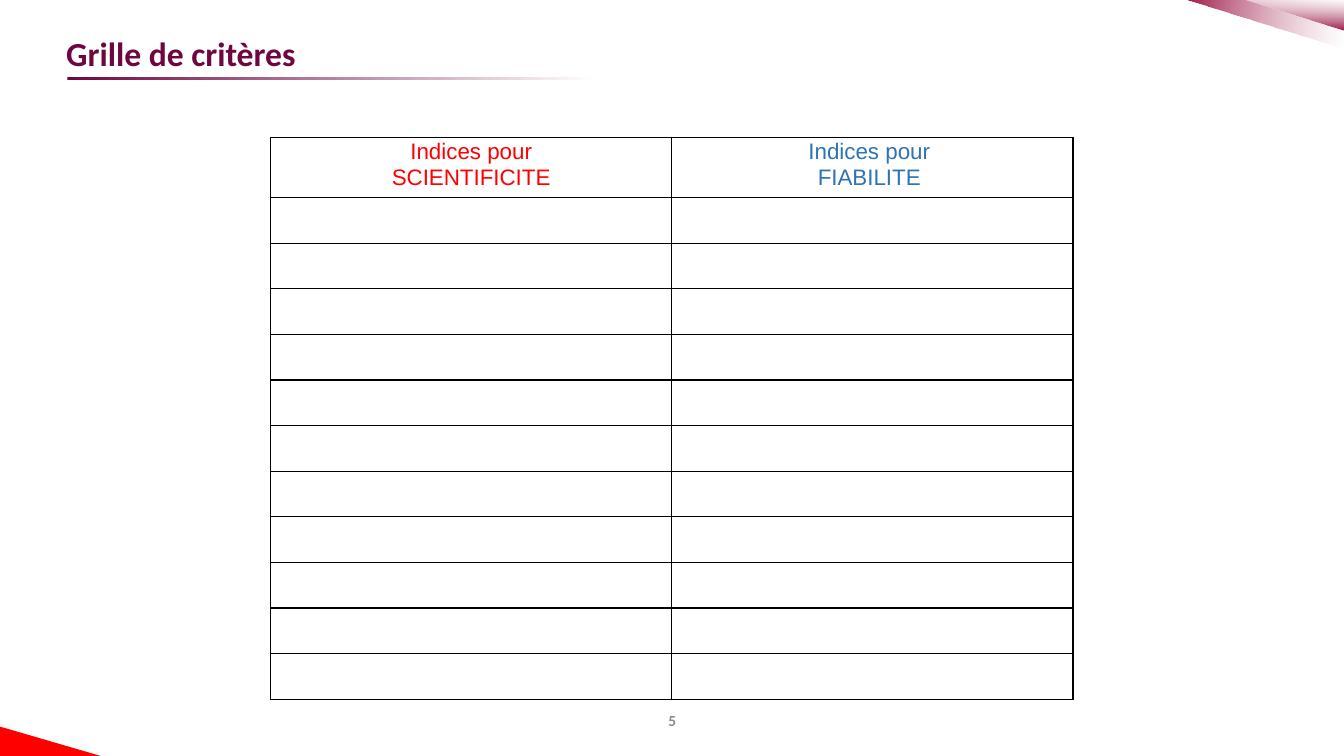
from dataclasses import dataclass
from typing import Any, Optional

from lxml import etree
from pptx import Presentation
from pptx import util as u
from pptx.dml.color import RGBColor
from pptx.enum import shapes, text
from pptx.oxml.ns import qn

WIDTH, HEIGHT = 33.87, 19.05
WHITE = "FFFFFF"
PLUM = "6E0740"
CRIMSON = "9D1747"


@dataclass
class Paint:
    color: str
    end: Optional[str] = None
    angle: int = 0  # counter-clockwise
    end_opacity: int = 100


@dataclass
class Wedge:
    points: list[tuple[float, float]]
    paint: Paint


@dataclass
class Label:
    words: str
    box: tuple[float, float, float, float]
    left_inset: float
    align: Any
    font: dict[str, Any]


@dataclass
class Heading:
    lines: list[str]
    color: str


WEDGES = [
    Wedge([(0, 18.31), (2.54, HEIGHT), (0, HEIGHT)], Paint("FF0000")),
    Wedge([(29.85, 0), (WIDTH, 0), (WIDTH, 1.22)], Paint(CRIMSON, WHITE, 352, 47)),
    Wedge([(31.34, 0), (WIDTH, 0), (WIDTH, 0.76)], Paint(CRIMSON, WHITE, 90, 57)),
]
LABELS = [
    Label("Grille de critères", (1.42, 0.94, 30.48, 0.79), 0.25, text.PP_ALIGN.LEFT,
          dict(name="Calibri", size=u.Pt(24), bold=True, color=PLUM)),
    Label("5", (11.58, 17.65, 10.72, 1.02), 0, text.PP_ALIGN.CENTER,
          dict(name="Calibri", size=u.Pt(11), bold=True, color="8C8C8C")),
]
HEADINGS = [
    Heading(["Indices pour", "SCIENTIFICITE"], "FF0000"),
    Heading(["Indices pour ", "FIABILITE "], "2E74B5"),
]
EMPTY_ROWS = 11
COLUMN_WIDTH, HEADING_HEIGHT, ROW_HEIGHT = 10.11, 1.52, 1.15


def rgb(value: str) -> RGBColor:
    return RGBColor.from_string(value)


def set_font(font: Any, values: dict[str, Any]) -> None:
    for key, value in values.items():
        if key == "color":
            font.color.rgb = rgb(value)
        else:
            setattr(font, key, value)


def paint_shape(sp: Any, paint: Paint) -> None:
    sp.shadow.inherit = False
    sp.line.fill.background()
    if paint.end is None:
        sp.fill.solid()
        sp.fill.fore_color.rgb = rgb(paint.color)
        return
    sp.fill.gradient()
    sp.fill.gradient_angle = paint.angle
    first, last = sp.fill.gradient_stops
    first.position, last.position = 0, 1
    first.color.rgb, last.color.rgb = rgb(paint.color), rgb(paint.end)
    if paint.end_opacity < 100:
        end = sp.element.findall(".//" + qn("a:srgbClr"))[-1]
        etree.SubElement(end, qn("a:alpha"), val=str(paint.end_opacity * 1000))


def add_wedge(slide: Any, wedge: Wedge) -> None:
    points = [(u.Cm(x), u.Cm(y)) for x, y in wedge.points]
    builder = slide.shapes.build_freeform(*points[0])
    builder.add_line_segments(points[1:], close=True)
    paint_shape(builder.convert_to_shape(), wedge.paint)


def add_label(slide: Any, label: Label) -> None:
    tf = slide.shapes.add_textbox(*map(u.Cm, label.box)).text_frame
    frame = dict(word_wrap=True, vertical_anchor=text.MSO_ANCHOR.MIDDLE,
                 margin_left=u.Cm(label.left_inset), margin_right=0,
                 margin_top=0, margin_bottom=0)
    for key, value in frame.items():
        setattr(tf, key, value)
    p = tf.paragraphs[0]
    p.alignment = label.align
    r = p.add_run()
    r.text = label.words
    set_font(r.font, label.font)


def format_cell(cell: Any) -> None:
    cell.fill.background()
    cell.margin_left = cell.margin_right = u.Cm(0.18)
    cell.margin_top = cell.margin_bottom = 0
    # Black border on each side, placed ahead of the fill
    tc_pr = cell.fill._xPr
    for i, side in enumerate(("lnL", "lnR", "lnT", "lnB")):
        ln = etree.Element(qn("a:" + side), w=str(u.Pt(1)))
        fill = etree.SubElement(ln, qn("a:solidFill"))
        etree.SubElement(fill, qn("a:srgbClr"), val="000000")
        tc_pr.insert(i, ln)


def add_grid(slide: Any) -> None:
    height = HEADING_HEIGHT + EMPTY_ROWS * ROW_HEIGHT
    table = slide.shapes.add_table(
        EMPTY_ROWS + 1, len(HEADINGS), u.Cm(6.82), u.Cm(3.46),
        u.Cm(COLUMN_WIDTH * len(HEADINGS)), u.Cm(height)).table
    table.first_row = table.horz_banding = False
    for column in table.columns:
        column.width = u.Cm(COLUMN_WIDTH)
    for i, row in enumerate(table.rows):
        row.height = u.Cm(ROW_HEIGHT if i else HEADING_HEIGHT)
    for cell in table.iter_cells():
        format_cell(cell)
    for i, heading in enumerate(HEADINGS):
        tf = table.cell(0, i).text_frame
        tf.text = "\n".join(heading.lines)
        for p in tf.paragraphs:
            p.alignment = text.PP_ALIGN.CENTER
            p.line_spacing = 1.07
            set_font(p.runs[0].font,
                     dict(name="Arial", size=u.Pt(16), color=heading.color))


def main() -> None:
    prs = Presentation()
    prs.slide_width, prs.slide_height = u.Cm(WIDTH), u.Cm(HEIGHT)
    slide = prs.slides.add_slide(prs.slide_layouts[6])

    # Corner decoration
    for wedge in WEDGES:
        add_wedge(slide, wedge)

    # Rule under the title
    rule = slide.shapes.add_shape(shapes.MSO_SHAPE.RECTANGLE, u.Cm(1.7),
                                  u.Cm(1.93), u.Cm(13.34), u.Cm(0.1))
    paint_shape(rule, Paint(PLUM, WHITE))

    # Title, page number and criteria grid
    for label in LABELS:
        add_label(slide, label)
    add_grid(slide)
    prs.save("out.pptx")


if __name__ == "__main__":
    main()
